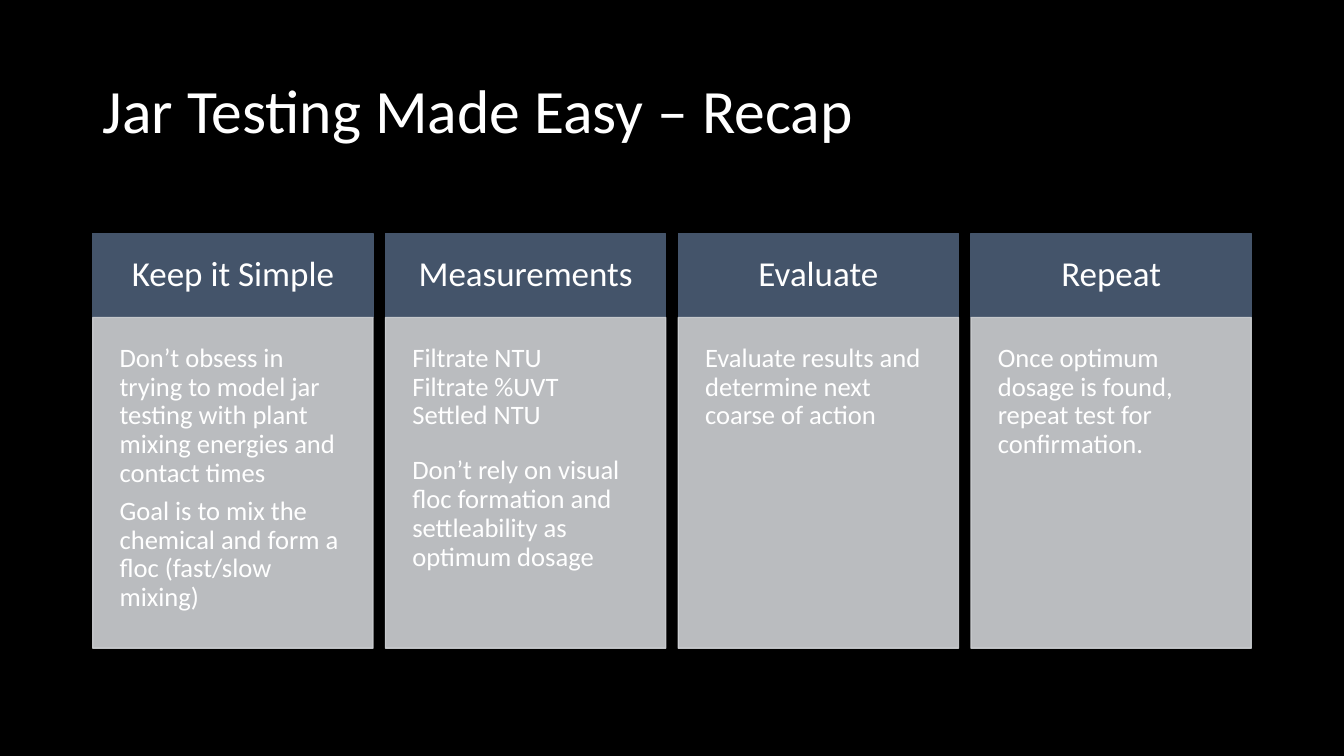
from dataclasses import dataclass

from pptx import Presentation
from pptx.dml.color import RGBColor
from pptx.dml.fill import FillFormat
from pptx.enum.shapes import MSO_SHAPE as Preset
from pptx.enum.text import MSO_ANCHOR as Anchor, PP_ALIGN as Align
from pptx.oxml import parse_xml
from pptx.oxml.ns import nsdecls
from pptx.shapes.autoshape import Shape
from pptx.slide import Slide
from pptx.util import Pt

FONT = "Calibri"
WHITE, NAVY, GREY, BLACK = "FFFFFF", "44546A", "CFD1D4", "000000"
LEFT, WIDTH, STEP = 66.24, 200.2, 209.1
HEAD_TOP, HEAD_H, BODY_H = 167, 59.8, 236.2
GAP = 6.7


@dataclass(frozen=True)
class Note:
    text: str
    after: float = GAP


@dataclass(frozen=True)
class Card:
    head: str
    notes: tuple[Note, ...]


CARDS = (
    Card("Keep it Simple", (
        Note("Don’t obsess in trying to model jar testing with plant "
             "mixing energies and contact times"),
        Note("Goal is to mix the chemical and form a floc (fast/slow mixing)"),
    )),
    Card("Measurements", (
        Note("Filtrate NTU", 0),
        Note("Filtrate %UVT", 0),
        Note("Settled NTU", 18.9),
        Note("Don’t rely on visual floc formation and settleability "
             "as optimum dosage"),
    )),
    Card("Evaluate", (
        Note("Evaluate results and determine next coarse of action"),
    )),
    Card("Repeat", (
        Note("Once optimum dosage is found, repeat test for confirmation."),
    )),
)


def color(code: str) -> RGBColor:
    return RGBColor.from_string(code)


def paint(fill: FillFormat, code: str, alpha: int = 100) -> None:
    """Fill with a solid colour at the given opacity in percent."""
    fill.solid()
    fill.fore_color.rgb = color(code)
    if alpha < 100:
        node = fill._xPr.find(".//{*}srgbClr")
        node.append(parse_xml(f'<a:alpha {nsdecls("a")} val="{alpha * 1000}"/>'))


def write(shape: Shape, notes: tuple[Note, ...], size: float,
          align: Align, anchor: Anchor, pad: tuple[float, float]) -> None:
    """Set one paragraph per note; pad is the side and the top inset."""
    frame = shape.text_frame
    frame.word_wrap = True
    frame.vertical_anchor = anchor
    frame.margin_left = frame.margin_right = Pt(pad[0])
    frame.margin_top = frame.margin_bottom = Pt(pad[1])
    frame.text = "\n".join(note.text for note in notes)
    for para, note in zip(frame.paragraphs, notes):
        para.alignment = align
        para.line_spacing = 0.9
        para.space_after = Pt(note.after)
        for run in para.runs:
            run.font.name = FONT
            run.font.size = Pt(size)
            run.font.color.rgb = color(WHITE)


def add_box(slide: Slide, left: float, top: float, height: float,
            code: str, alpha: int = 100) -> Shape:
    box = slide.shapes.add_shape(Preset.RECTANGLE, Pt(left), Pt(top),
                                 Pt(WIDTH), Pt(height))
    box.shadow.inherit = False
    box.line.width = Pt(1)
    paint(box.fill, code, alpha)
    paint(box.line.fill, code, alpha)
    return box


def add_card(slide: Slide, card: Card, left: float) -> None:
    head = add_box(slide, left, HEAD_TOP, HEAD_H, NAVY)
    write(head, (Note(card.head, 0),), 25, Align.CENTER, Anchor.MIDDLE, (16, 9))
    body = add_box(slide, left, HEAD_TOP + HEAD_H, BODY_H, GREY, 90)
    write(body, card.notes, 19, Align.LEFT, Anchor.TOP, (19.2, 19.2))


def main() -> None:
    deck = Presentation()
    deck.slide_width, deck.slide_height = Pt(960), Pt(540)
    slide = deck.slides.add_slide(deck.slide_layouts[6])
    paint(slide.background.fill, BLACK)

    title = slide.shapes.add_textbox(Pt(LEFT), Pt(28.8), Pt(828), Pt(104.4))
    write(title, (Note("Jar Testing Made Easy – Recap", 0),), 44,
          Align.LEFT, Anchor.MIDDLE, (7.2, 3.6))
    for col, card in enumerate(CARDS):
        add_card(slide, card, LEFT + col * STEP)
    deck.save("out.pptx")


if __name__ == "__main__":
    main()
